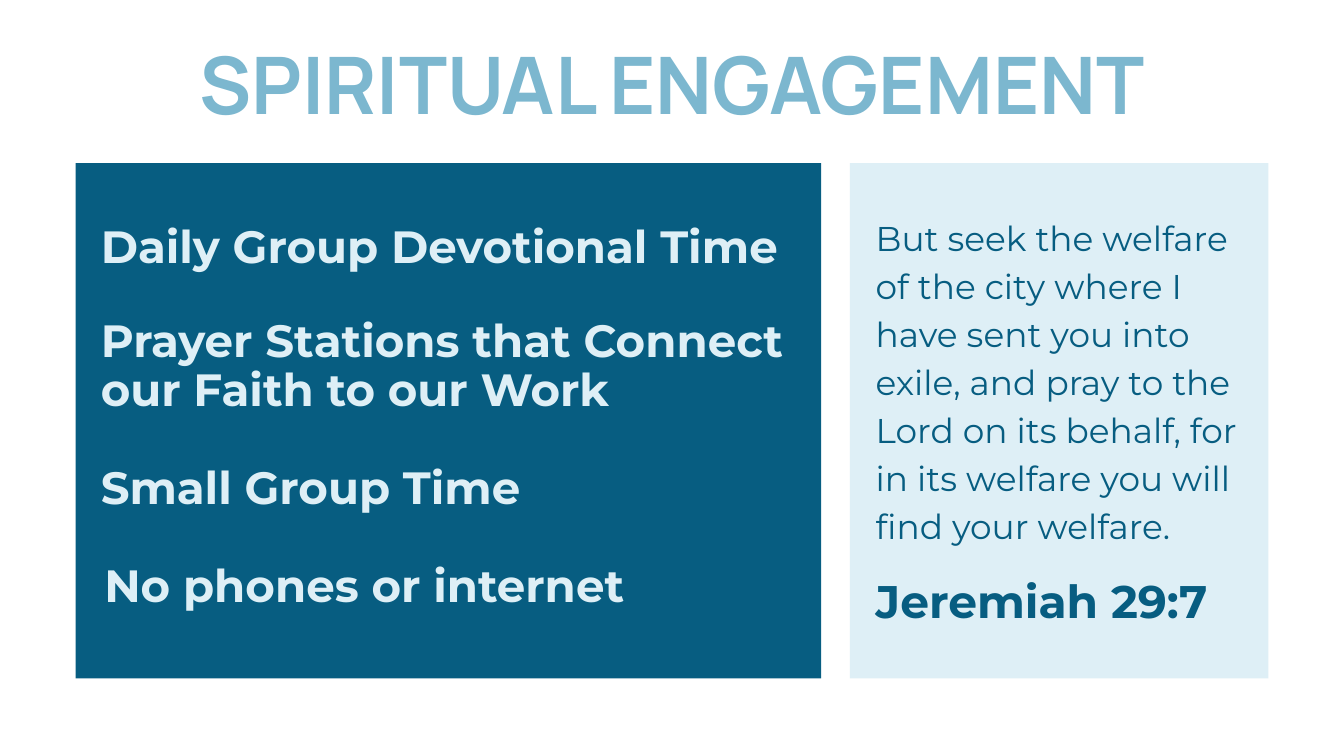
from dataclasses import dataclass

from pptx import Presentation, util as u
from pptx.dml import color
from pptx.enum import shapes, text

PX = 9525


@dataclass(frozen=True)
class Theme:
    navy: str = "075D81"
    sky: str = "7CB7CF"
    pale: str = "DEEFF6"
    heading_font: str = "Manrope"
    body_font: str = "Montserrat"
    title_size: float = 85
    item_size: float = 48.4
    verse_size: float = 36.8
    reference_size: float = 48.9


THEME = Theme()


def to_emu(box):
    return [u.Emu(length * PX) for length in box]


def add_panel(slide, box, fill):
    shape = slide.shapes.add_shape(shapes.MSO_SHAPE.RECTANGLE, *to_emu(box))
    shape.shadow.inherit = False
    shape.fill.solid()
    shape.fill.fore_color.rgb = color.RGBColor.from_string(fill)
    shape.line.fill.background()


def add_text(slide, box, words, size, ink, leading, bold=True,
             font=THEME.body_font, align=text.PP_ALIGN.LEFT):
    frame = slide.shapes.add_textbox(*to_emu(box)).text_frame
    frame.word_wrap = True
    frame.margin_left = frame.margin_right = 0
    frame.margin_top = frame.margin_bottom = 0
    paragraph = frame.paragraphs[0]
    paragraph.alignment = align
    paragraph.line_spacing = u.Pt(leading)
    run = paragraph.add_run()
    run.text = words
    run.font.name = font
    run.font.size = u.Pt(size)
    run.font.bold = bold
    run.font.color.rgb = color.RGBColor.from_string(ink)


def add_title(slide, box):
    add_text(slide, box, "SPIRITUAL ENGAGEMENT", THEME.title_size, THEME.sky, 78.2,
             font=THEME.heading_font, align=text.PP_ALIGN.CENTER)


def add_activities(slide, box):
    left, top, width, height = box
    add_panel(slide, box, THEME.navy)
    activities = [
        ("Daily Group Devotional Time", 36, 66, 87, 67.9),
        ("Prayer Stations that Connect our Faith to our Work", 36, 221, 141, 52.2),
        ("Small Group Time", 36, 431, 72, 52.2),
        ("No phones or internet", 41, 571, 72, 52.2),
    ]
    for words, indent, offset, depth, leading in activities:
        add_text(slide, (left + indent, top + offset, width - 83, depth),
                 words, THEME.item_size, THEME.pale, leading)


def add_scripture(slide, box):
    left, top, width, height = box
    add_panel(slide, box, THEME.pale)
    verse = ("But seek the welfare of the city where I have sent you into exile, "
             "and pray to the Lord on its behalf, for in its welfare you will "
             "find your welfare.")
    add_text(slide, (left + 37, top + 67, width - 74, 473), verse,
             THEME.verse_size, THEME.navy, 51.5, bold=False)
    add_text(slide, (left + 37, top + 573, width - 37, 88), "Jeremiah 29:7",
             THEME.reference_size, THEME.navy, 68.5)


def main():
    presentation = Presentation()
    presentation.slide_width, presentation.slide_height = to_emu((1920, 1080))
    slide = presentation.slides.add_slide(presentation.slide_layouts[6])
    add_title(slide, (61, 82, 1798, 121))
    add_activities(slide, (108, 233, 1065, 736))
    add_scripture(slide, (1214, 233, 598, 736))
    presentation.save("out.pptx")


if __name__ == "__main__":
    main()
